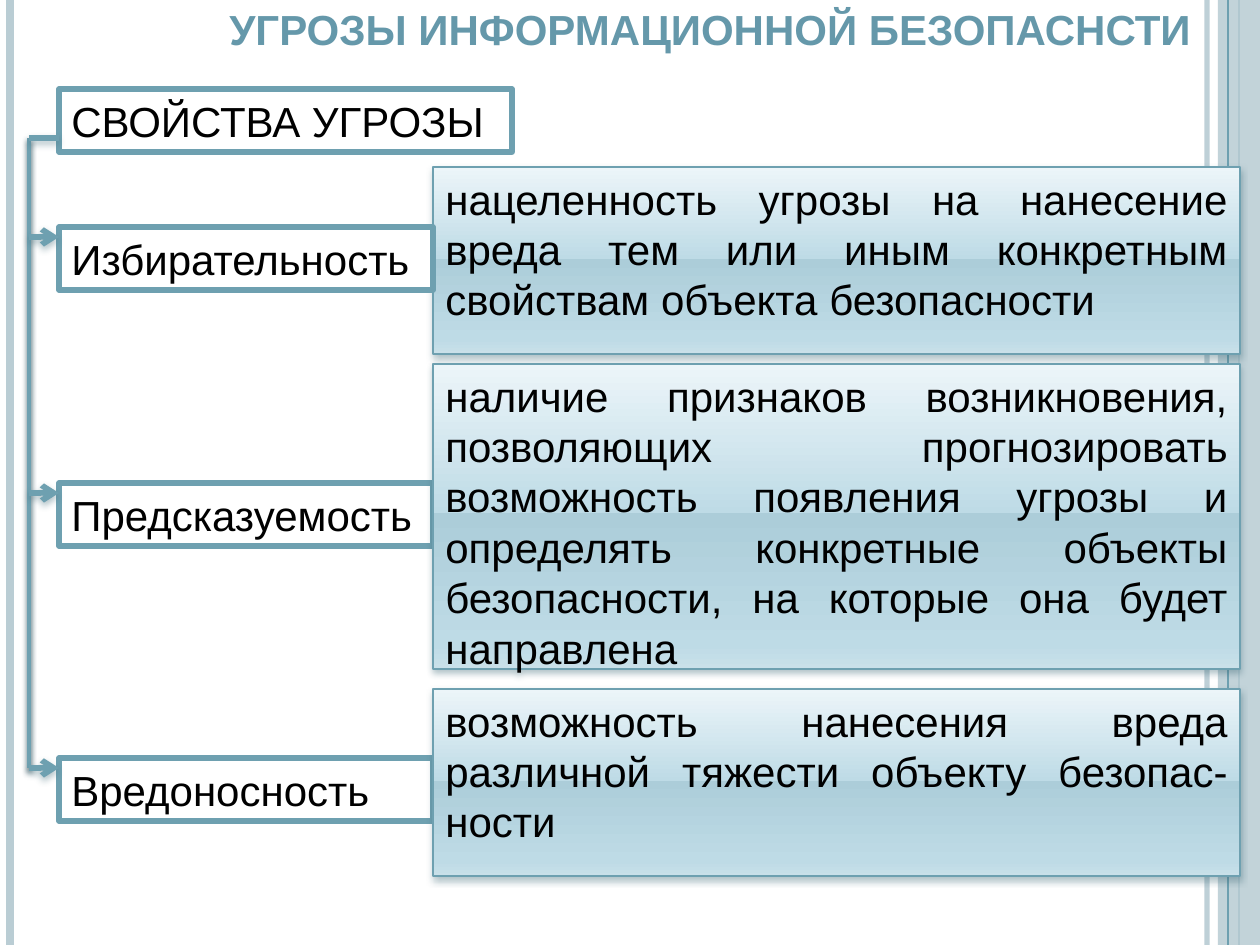
from dataclasses import dataclass

from lxml.etree import SubElement
from pptx import Presentation
from pptx.dml.color import RGBColor
from pptx.enum.shapes import MSO_CONNECTOR, MSO_SHAPE
from pptx.enum.text import MSO_ANCHOR, MSO_AUTO_SIZE, PP_ALIGN
from pptx.oxml.ns import qn
from pptx.util import Pt

SCALE = 914400 / 126
WIDE, HIGH = 1260, 945
LEFT, SPLIT, TRUNK = 59, 433, 29
COLORS = {
    "teal": "6EA0B0", "pale": "BACDD4", "title": "6598AA", "white": "FFFFFF",
    "black": "000000", "shade": "376472", "dusk": "44636D",
}
STOPS = ((0, "ECF5F9"), (49, "BEDBE6"), (49, "ACCDD9"), (92, "BEDBE6"), (100, "C9E0E9"))


@dataclass(frozen=True)
class Box:
    x: int
    y: int
    w: int
    h: int
    text: str = ""


@dataclass(frozen=True)
class Rule:
    x: int
    y: int
    to_x: int
    to_y: int
    width: float
    color: str = "teal"
    alpha: int = 100


@dataclass(frozen=True)
class Threat:
    name: str
    label: int
    top: int
    high: int
    note: str


BANDS = [
    Rule(1207, 0, 1207, HIGH, 3, "pale", 93),
    Rule(10, 0, 10, HIGH, 4.5, "pale"),
    Rule(1239, 0, 1239, HIGH, 1.5),
]
EDGE = Rule(1228, 0, 1228, HIGH, 0.75)
THREATS = [
    Threat("Избирательность", 227, 167, 187,
           "нацеленность угрозы на нанесение вреда тем или иным конкретным "
           "свойствам объекта безопасности"),
    Threat("Предсказуемость", 483, 364, 305,
           "наличие признаков возникновения, позволяющих прогнозировать "
           "возможность появления угрозы и определять конкретные объекты "
           "безопасности, на которые она будет направлена"),
    Threat("Вредоносность", 758, 689, 187,
           "возможность нанесения вреда различной тяжести объекту безопас-ности"),
]


def px(size: int) -> int:
    return round(size * SCALE)


def rgb(name: str) -> RGBColor:
    return RGBColor.from_string(COLORS[name])


def fade(node, alpha: int) -> None:
    for color in node.iter(qn("a:srgbClr")):
        SubElement(color, qn("a:alpha"), val=str(alpha * 1000))


def glow(props, color: str = "shade", alpha: int = 38, blur: float = 4) -> None:
    effect = props.find(qn("a:effectLst"))
    cast = SubElement(effect, qn("a:outerShdw"), blurRad=str(Pt(blur)),
                      dist=str(Pt(2)), dir="5400000", rotWithShape="0")
    SubElement(cast, qn("a:srgbClr"), val=COLORS[color])
    fade(cast, alpha)


def blend(shape) -> None:
    shape.fill.gradient()
    shape.fill.gradient_angle = 270
    stops = shape.fill._fill._gradFill.find(qn("a:gsLst"))
    for old in list(stops):
        stops.remove(old)
    for pos, color in STOPS:
        stop = SubElement(stops, qn("a:gs"), pos=str(pos * 1000))
        SubElement(stop, qn("a:srgbClr"), val=color)


def draw_rule(slide, rule: Rule, arrow: bool = False):
    line = slide.shapes.add_connector(
        MSO_CONNECTOR.STRAIGHT, px(rule.x), px(rule.y), px(rule.to_x), px(rule.to_y))
    line.line.color.rgb = rgb(rule.color)
    line.line.width = Pt(rule.width)
    props = line._element.spPr
    if rule.alpha < 100:
        fade(props, rule.alpha)
    if arrow:
        SubElement(props.find(qn("a:ln")), qn("a:tailEnd"), type="arrow")
    SubElement(props, qn("a:effectLst"))
    return props


def draw_rect(slide, box: Box):
    shape = slide.shapes.add_shape(
        MSO_SHAPE.RECTANGLE, px(box.x), px(box.y), px(box.w), px(box.h))
    shape.shadow.inherit = False
    return shape


def write(shape, text: str, color: str = "black", align=PP_ALIGN.LEFT,
          anchor=MSO_ANCHOR.TOP, bold: bool = False) -> None:
    frame = shape.text_frame
    frame.word_wrap = True
    frame.vertical_anchor = anchor
    para = frame.paragraphs[0]
    para.text = text
    para.alignment = align
    font = para.font
    font.name, font.size, font.bold = "Arial", Pt(24), bold
    font.color.rgb = rgb(color)


def draw_label(slide, box: Box) -> None:
    shape = draw_rect(slide, box)
    shape.fill.solid()
    shape.fill.fore_color.rgb = rgb("white")
    shape.line.color.rgb = rgb("teal")
    shape.line.width = Pt(3.15)
    write(shape, box.text)
    shape.text_frame.auto_size = MSO_AUTO_SIZE.SHAPE_TO_FIT_TEXT


def draw_panel(slide, threat: Threat) -> None:
    shape = draw_rect(slide, Box(SPLIT, threat.top, 807, threat.high))
    blend(shape)
    shape.line.color.rgb = rgb("teal")
    shape.line.width = Pt(0.9)
    glow(shape._element.spPr)
    write(shape, threat.note, align=PP_ALIGN.JUSTIFY)


def draw_frame(slide) -> None:
    for band in BANDS:
        draw_rule(slide, band)
    side = draw_rect(slide, Box(1218, 0, 42, HIGH))
    side.fill.solid()
    side.fill.fore_color.rgb = rgb("pale")
    side.line.fill.background()
    fade(side._element.spPr, 87)
    draw_rule(slide, EDGE)


def draw_tree(slide) -> None:
    start, end = 138, THREATS[-1].label + 10
    glow(draw_rule(slide, Rule(TRUNK, start, TRUNK, end, 2.5)), "dusk", 83, 3.1)
    for threat in THREATS:
        y = threat.label + 10
        glow(draw_rule(slide, Rule(TRUNK, y, LEFT, y, 3.15), True))
    glow(draw_rule(slide, Rule(TRUNK, start, LEFT, start, 3.15)))


def main() -> None:
    """Build the slide on the properties of a security threat."""
    deck = Presentation()
    deck.slide_width, deck.slide_height = px(WIDE), px(HIGH)
    slide = deck.slides.add_slide(deck.slide_layouts[6])
    draw_frame(slide)
    first, *rest = THREATS
    draw_panel(slide, first)
    title = slide.shapes.add_textbox(px(217), 0, px(1029), px(60))
    write(title, "УГРОЗЫ ИНФОРМАЦИОННОЙ БЕЗОПАСНСТИ", "title",
          anchor=MSO_ANCHOR.BOTTOM, bold=True)
    draw_label(slide, Box(LEFT, 89, 453, 63, "СВОЙСТВА УГРОЗЫ"))
    for threat in THREATS:
        draw_label(slide, Box(LEFT, threat.label, SPLIT - LEFT, 63, threat.name))
    for threat in rest:
        draw_panel(slide, threat)
    draw_tree(slide)
    deck.save("out.pptx")


if __name__ == "__main__":
    main()
